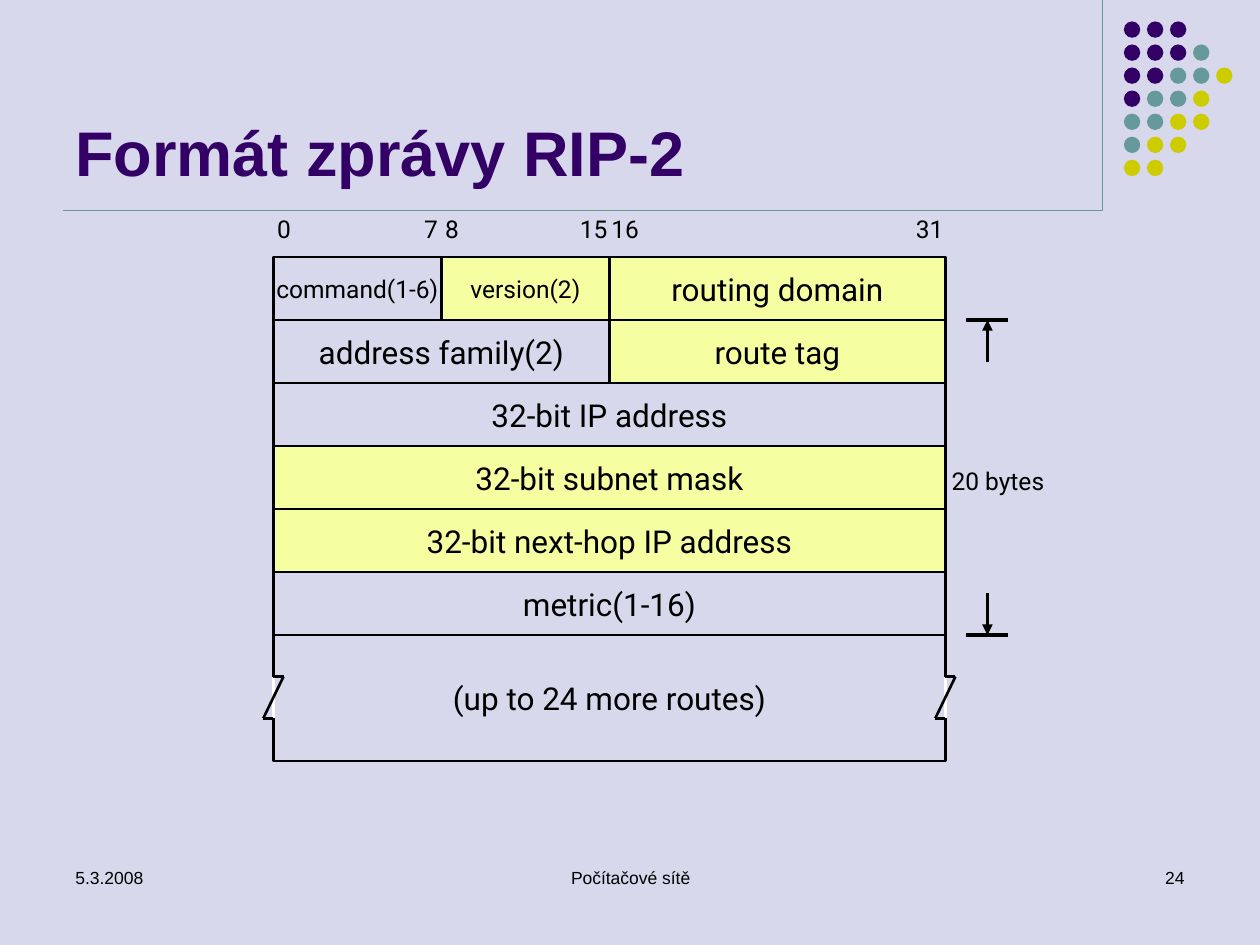
from pptx import Presentation
from pptx.util import Inches as inch, Pt
from pptx.dml.color import RGBColor as RGB
from pptx.enum.shapes import MSO_SHAPE as Kind, MSO_CONNECTOR as Conn
from pptx.enum.text import PP_ALIGN as Align, MSO_ANCHOR as Anchor
from pptx.oxml.ns import qn
from lxml.etree import SubElement as sub

# Content
HUES = {"back": "D8D8EC", "ink": "000000", "deep": "330066", "teal": "669999",
        "lime": "CCCC00", "new": "F5FEA0", "gap": "FFFFFF"}
TITLE = "Formát zprávy RIP-2"
FOOT = [("5.3.2008", 0.5, 2.33, Align.LEFT),
        ("Počítačové sítě", 3.42, 3.17, Align.CENTER),
        ("24", 7.17, 2.33, Align.RIGHT)]
# Each field: text, first bit, bits, row, rows, fill, size
FIELDS = [
    ("command(1-6)", 0, 8, 0, 1, None, 14),
    ("version(2)", 8, 8, 0, 1, "new", 14),
    ("routing domain", 16, 16, 0, 1, "new", 18),
    ("address family(2)", 0, 16, 1, 1, None, 18),
    ("route tag", 16, 16, 1, 1, "new", 18),
    ("32-bit IP address", 0, 32, 2, 1, None, 18),
    ("32-bit subnet mask", 0, 32, 3, 1, "new", 18),
    ("32-bit next-hop IP address", 0, 32, 4, 1, "new", 18),
    ("metric(1-16)", 0, 32, 5, 1, None, 18),
    ("(up to 24 more routes)", 0, 32, 6, 2, None, 18),
]
# Each bit label: text, bit edge, whether it ends at that edge
BITS = [("0", 0, False), ("7", 8, True), ("8", 8, False),
        ("15", 16, True), ("16", 16, False), ("31", 32, True)]
SPAN = "20 bytes"
DOTS = ["ddd", "dddt", "ddtty", "dtty", "ttyy", "tyy", "yy"]
DOT_HUES = {"d": "deep", "t": "teal", "y": "lime"}

# Grid
LEFT, TOP, ROW, BIT = 2.17, 2.04, 0.5, 1 / 6
RIGHT = LEFT + 32 * BIT

deck = Presentation()
deck.slide_width, deck.slide_height = inch(10), inch(7.5)
page = deck.slides.add_slide(deck.slide_layouts[6])
page.background.fill.solid()
page.background.fill.fore_color.rgb = RGB.from_string(HUES["back"])


def write(frame, text, size, align, font="Roboto", hue="ink", bold=False):
    para = frame.paragraphs[0]
    para.alignment = align
    run = para.add_run()
    run.text = text
    run.font.name, run.font.size, run.font.bold = font, Pt(size), bold
    run.font.color.rgb = RGB.from_string(HUES[hue])


def label(text, x, y, w, h, size, align, pad=True, anchor=Anchor.TOP, **look):
    frame = page.shapes.add_textbox(inch(x), inch(y), inch(w), inch(h)).text_frame
    frame.word_wrap = pad
    frame.vertical_anchor = anchor
    if not pad:
        frame.margin_left = frame.margin_right = 0
        frame.margin_top = frame.margin_bottom = 0
    write(frame, text, size, align, **look)


def shape(kind, x, y, w, h, fill=None, edge=None):
    item = page.shapes.add_shape(kind, inch(x), inch(y), inch(w), inch(h))
    item.shadow.inherit = False
    if fill:
        item.fill.solid()
        item.fill.fore_color.rgb = RGB.from_string(HUES[fill])
    else:
        item.fill.background()
    if edge:
        item.line.color.rgb = RGB.from_string(HUES[edge])
        item.line.width = Pt(1.5)
    else:
        item.line.fill.background()
    return item


def line(x1, y1, x2, y2, hue="ink", width=1.5, arrow=False):
    item = page.shapes.add_connector(
        Conn.STRAIGHT, inch(x1), inch(y1), inch(x2), inch(y2))
    item.line.color.rgb = RGB.from_string(HUES[hue])
    item.line.width = Pt(width)
    if arrow:
        sub(item.line._get_or_add_ln(), qn("a:tailEnd"), type="triangle")
    sub(item._element.spPr, qn("a:effectLst"))


# Frame lines and dot pattern
line(8.75, 0, 8.75, 1.67, "teal", 0.75)
line(0.5, 1.67, 8.75, 1.67, "teal", 0.75)
for r, marks in enumerate(DOTS):
    for c, mark in enumerate(marks):
        shape(Kind.OVAL, 8.92 + c * 0.183, 0.17 + r * 0.183, 0.13, 0.13,
              DOT_HUES[mark])

# Title and footer
label(TITLE, 0.5, 0.13, 8.25, 1.42, 36, Align.LEFT, anchor=Anchor.BOTTOM,
      font="Arial", hue="deep", bold=True)
for text, x, w, align in FOOT:
    label(text, x, 6.83, w, 0.5, 10, align, font="Arial")

# Message fields
for text, bit, bits, row, rows, fill, size in FIELDS:
    box = shape(Kind.RECTANGLE, LEFT + bit * BIT, TOP + row * ROW,
                bits * BIT, rows * ROW, fill, "ink")
    box.text_frame.word_wrap = False
    box.text_frame.vertical_anchor = Anchor.MIDDLE
    write(box.text_frame, text, size, Align.CENTER)

# Bit numbers
for text, bit, ends in BITS:
    w = BIT if len(text) == 1 else 1.5 * BIT
    label(text, LEFT + bit * BIT - (w if ends else 0), 1.7, w, 0.23, 14,
          Align.CENTER, pad=False)

# Break marks on both sides of the last field
high, low, half = 5.37, 5.7, 0.08
for x in (LEFT, RIGHT):
    line(x, high, x, low, "gap", 2)
    line(x, high, x + half, high)
    line(x - half, low, x, low)
    line(x + half, high, x - half, low)

# Span of one route entry
mid = RIGHT + 2 * BIT
for row, turn in ((1, 1), (6, -1)):
    y = TOP + row * ROW
    line(mid + BIT, y, mid - BIT, y, width=2)
    line(mid, y + turn * 2 * BIT, mid, y, width=2, arrow=True)
label(SPAN, RIGHT, 3.7, 5 * BIT, 0.23, 14, Align.CENTER, pad=False)

deck.save("out.pptx")
